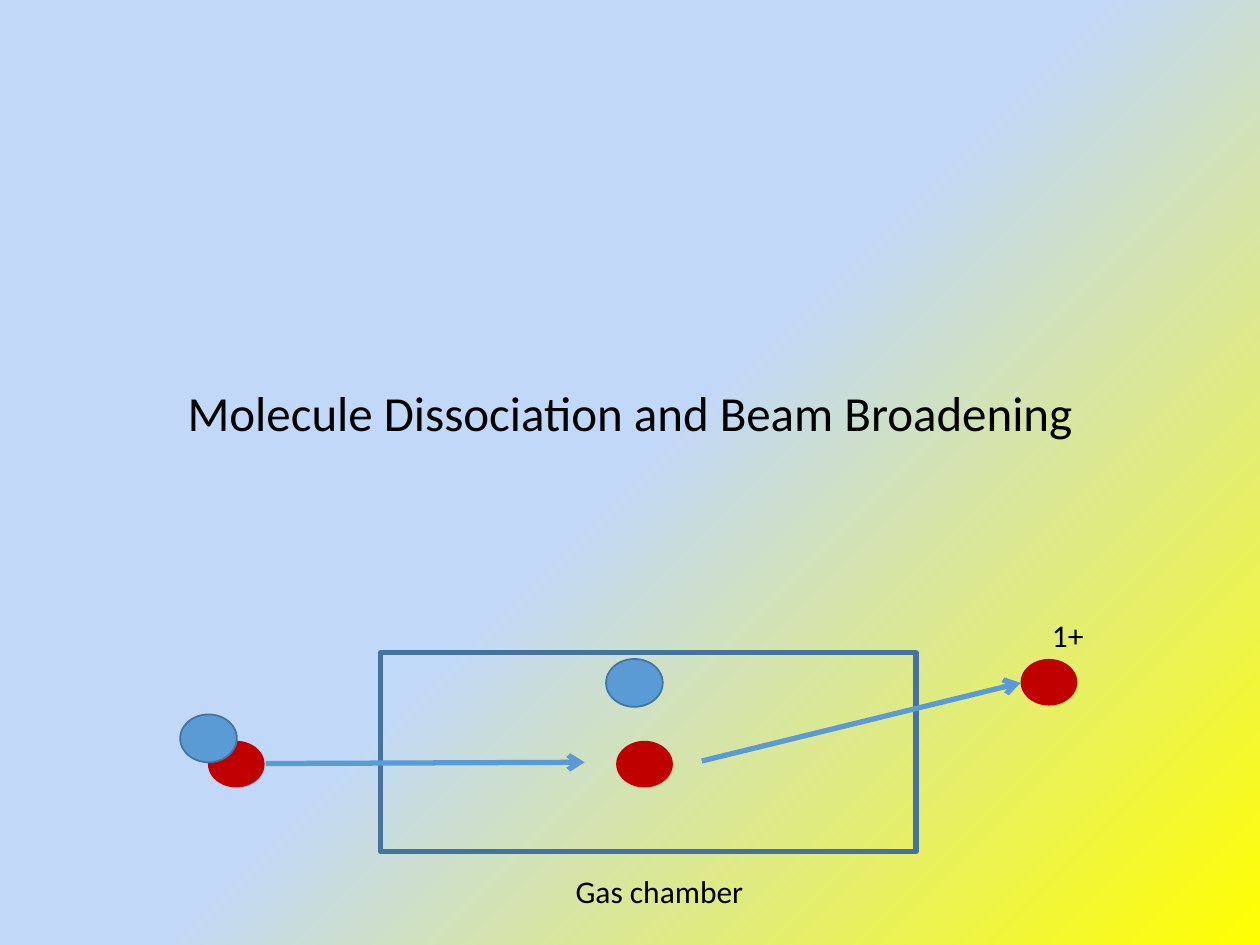
from lxml.etree import SubElement
from pptx import Presentation
from pptx.dml.color import RGBColor
from pptx.enum.shapes import MSO_CONNECTOR, MSO_SHAPE
from pptx.enum.text import MSO_ANCHOR, PP_ALIGN
from pptx.oxml.ns import qn
from pptx.util import Inches, Pt

COLORS = {
    "sky": "C2D8F8",
    "yellow": "FFFF00",
    "black": "000000",
    "ion": "C00000",
    "atom": "5B9BD5",
    "outline": "43739E",
}
FONT = "Calibri"
TITLE = "Molecule Dissociation and Beam Broadening"
TITLE_BOX = (0.69, 2.57, 8.62, 1.45)
CHAMBER = (3.02, 5.18, 4.25, 1.58)
LABELS = [
    ("Gas chamber", (4.47, 6.87, 1.6, 0.4)),
    ("1+", (8.25, 4.84, 0.65, 0.4)),
]
PARTICLE_SIZE = {"ion": (0.45, 0.37), "atom": (0.45, 0.38)}
PARTICLES = [
    ("ion", 1.65, 5.88),
    ("atom", 1.43, 5.67),
    ("ion", 4.89, 5.88),
    ("atom", 4.81, 5.23),
    ("ion", 8.1, 5.23),
]
BEAMS = [(2.11, 6.06, 4.64, 6.05), (5.57, 6.04, 8.1, 5.42)]


def color(name):
    return RGBColor.from_string(COLORS[name])


def inches(values):
    return [Inches(value) for value in values]


def set_line(line, name, width):
    line.color.rgb = color(name)
    line.width = Pt(width)


def write(frame, text, size):
    frame.word_wrap = True
    paragraph = frame.paragraphs[0]
    paragraph.text = text
    paragraph.font.name = FONT
    paragraph.font.size = Pt(size)
    paragraph.font.color.rgb = color("black")
    return paragraph


def add_outlined(slide, kind, box, fill=None, line=None, width=1):
    shape = slide.shapes.add_shape(kind, *inches(box))
    shape.shadow.inherit = False
    if fill:
        shape.fill.solid()
        shape.fill.fore_color.rgb = color(fill)
    else:
        shape.fill.background()
    if line:
        set_line(shape.line, line, width)
    else:
        shape.line.fill.background()


def add_beam(slide, ends):
    beam = slide.shapes.add_connector(MSO_CONNECTOR.STRAIGHT, *inches(ends))
    set_line(beam.line, "atom", 3)
    SubElement(beam.line._get_or_add_ln(), qn("a:tailEnd"), type="arrow")
    SubElement(beam._element.spPr, qn("a:effectLst"))


def add_particle(slide, kind, left, top):
    outline = "outline" if kind == "atom" else None
    add_outlined(slide, MSO_SHAPE.OVAL, (left, top, *PARTICLE_SIZE[kind]), kind, outline)


def main():
    deck = Presentation()
    deck.slide_width, deck.slide_height = inches((10, 7.5))
    slide = deck.slides.add_slide(deck.slide_layouts[5])

    background = slide.background.fill
    background.gradient()
    background.gradient_angle = 315
    for stop, (name, position) in zip(background.gradient_stops, [("sky", 0.5), ("yellow", 1)]):
        stop.color.rgb = color(name)
        stop.position = position

    title = slide.shapes.title
    title.left, title.top, title.width, title.height = inches(TITLE_BOX)
    title.text_frame.vertical_anchor = MSO_ANCHOR.MIDDLE
    heading = write(title.text_frame, TITLE, 28)
    heading.alignment = PP_ALIGN.CENTER
    heading.line_spacing = 0.9

    add_outlined(slide, MSO_SHAPE.RECTANGLE, CHAMBER, line="outline", width=3)
    for text, box in LABELS:
        write(slide.shapes.add_textbox(*inches(box)).text_frame, text, 18)
    for ends in BEAMS:
        add_beam(slide, ends)
    for particle in PARTICLES:
        add_particle(slide, *particle)

    deck.save("out.pptx")


if __name__ == "__main__":
    main()
